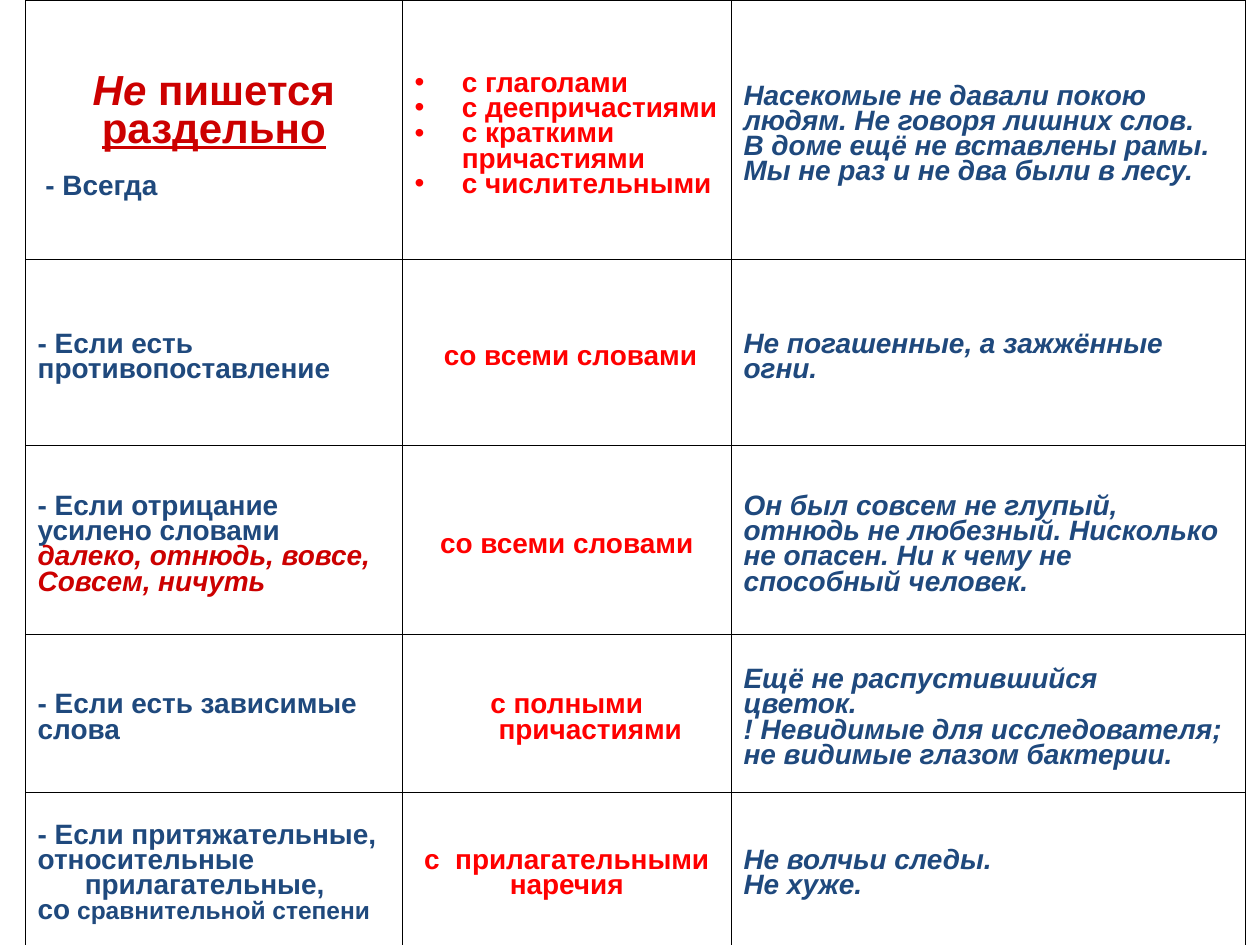
from dataclasses import dataclass

from lxml.etree import SubElement
from pptx import Presentation
from pptx.dml.color import RGBColor
from pptx.enum.text import MSO_ANCHOR, PP_ALIGN
from pptx.oxml import parse_xml
from pptx.oxml.ns import nsdecls, qn
from pptx.util import Cm, Pt

BLUE = RGBColor(0x1F, 0x49, 0x7D)
RED = RGBColor(0xFF, 0x00, 0x00)
DARK_RED = RGBColor(0xCC, 0x00, 0x00)
BLACK = RGBColor(0x00, 0x00, 0x00)

COLUMN_WIDTHS = [Cm(7.6), Cm(6.63), Cm(10.37)]
ROW_HEIGHTS = [Cm(5.23), Cm(3.75), Cm(3.81), Cm(3.18), Cm(3.08)]
HANGING = Cm(0.95)
BORDER_WIDTH = Pt(0.11)
LINE_SPACING = 0.81
EMPTY_LINE = Pt(14.4)


@dataclass
class Span:
    text: str
    color: RGBColor = BLUE
    size: float = 16
    italic: bool = False
    underline: bool = False


@dataclass
class Para:
    spans: list[Span]
    align: PP_ALIGN = PP_ALIGN.LEFT
    bullet: bool = False
    before: int = 0
    after: int = 0


def rule(*lines: str) -> list[Para]:
    return [Para([Span(line)]) for line in lines]


def words(*lines: str) -> list[Para]:
    return [Para([Span(line, RED)], PP_ALIGN.CENTER) for line in lines]


def bullets(*lines: str) -> list[Para]:
    return [Para([Span(line, RED)], bullet=True) for line in lines]


def examples(*lines: str, color: RGBColor = BLUE) -> list[Para]:
    return [Para([Span(line, color, italic=True)]) for line in lines]


# Table content: rule, parts of speech, examples
HEADING = [
    Para([Span("Не", DARK_RED, 24, italic=True), Span(" пишется", DARK_RED, 24)],
         PP_ALIGN.CENTER),
    Para([Span("раздельно", DARK_RED, 24, underline=True)], PP_ALIGN.CENTER),
    Para([Span(" - Всегда")], before=EMPTY_LINE),
]
ROWS = [
    [HEADING,
     bullets("с глаголами", "с деепричастиями", "с краткими причастиями",
             "с числительными"),
     examples("Насекомые не давали покою", "людям. Не говоря лишних слов.",
              "В доме ещё не вставлены рамы.", "Мы не раз и не два были в лесу.")],
    [rule("- Если есть") + [Para([Span("противопоставление")], after=EMPTY_LINE)],
     words(" со всеми словами"),
     examples("Не погашенные, а зажжённые", "огни.")],
    [rule("- Если отрицание", "усилено словами")
     + examples("далеко, отнюдь, вовсе,", "Совсем, ничуть", color=DARK_RED),
     words("со всеми словами"),
     examples("Он был совсем не глупый,", "отнюдь не любезный. Нисколько",
              "не опасен. Ни к чему не", "способный человек.")],
    [rule("- Если есть зависимые", "слова"),
     words("с полными причастиями"),
     examples("Ещё не распустившийся", "цветок.",
              "! Невидимые для исследователя;", "не видимые глазом бактерии.")],
    [rule("- Если притяжательные,", "относительные прилагательные,")
     + [Para([Span("со"), Span(" сравнительной степени", size=14)])],
     words("с  прилагательными", "наречия"),
     examples("Не волчьи следы.", "Не хуже.")],
]


def set_all(target, values: dict) -> None:
    for name, value in values.items():
        setattr(target, name, value)


def add_bullet(properties, color: RGBColor) -> None:
    tint = SubElement(properties, qn("a:buClr"))
    SubElement(tint, qn("a:srgbClr")).set("val", str(color))
    SubElement(properties, qn("a:buFont")).set("typeface", "Arial")
    SubElement(properties, qn("a:buChar")).set("char", "•")


def write_para(paragraph, para: Para) -> None:
    set_all(paragraph, {"alignment": para.align, "line_spacing": LINE_SPACING,
                        "space_before": para.before, "space_after": para.after})
    properties = paragraph._p.get_or_add_pPr()
    properties.set("marL", str(HANGING))
    properties.set("indent", str(-HANGING))
    if para.bullet:
        add_bullet(properties, para.spans[0].color)
    for span in para.spans:
        run = paragraph.add_run()
        run.text = span.text
        set_all(run.font, {"name": "Arial", "size": Pt(span.size), "bold": True,
                           "italic": span.italic, "underline": span.underline})
        run.font.color.rgb = span.color


def draw_borders(cell) -> None:
    properties = cell._tc.get_or_add_tcPr()
    for position, side in enumerate(("lnL", "lnR", "lnT", "lnB")):
        properties.insert(position, parse_xml(
            f'<a:{side} {nsdecls("a")} w="{BORDER_WIDTH}"><a:solidFill>'
            f'<a:srgbClr val="{BLACK}"/></a:solidFill></a:{side}>'))


def fill_cell(cell, paras: list[Para], top: int) -> None:
    set_all(cell, {"vertical_anchor": MSO_ANCHOR.MIDDLE, "margin_top": top,
                   "margin_left": Cm(0.25), "margin_right": Cm(0.25),
                   "margin_bottom": Cm(0.13)})
    cell.fill.background()
    draw_borders(cell)
    frame = cell.text_frame
    for index, para in enumerate(paras):
        write_para(frame.add_paragraph() if index else frame.paragraphs[0], para)


def main() -> None:
    deck = Presentation()
    set_all(deck, {"slide_width": Cm(25.4), "slide_height": Cm(19.05)})
    page = deck.slides.add_slide(deck.slide_layouts[6])

    # Table grid
    table = page.shapes.add_table(len(ROWS), len(COLUMN_WIDTHS), Cm(0.51), Cm(0),
                                  sum(COLUMN_WIDTHS), sum(ROW_HEIGHTS)).table
    set_all(table, {"first_row": False, "horz_banding": False})
    for column, width in zip(table.columns, COLUMN_WIDTHS):
        column.width = width
    for row, height in zip(table.rows, ROW_HEIGHTS):
        row.height = height

    # Cell text
    for row, contents in zip(table.rows, ROWS):
        for cell, paras in zip(row.cells, contents):
            fill_cell(cell, paras, Cm(0.46) if paras is HEADING else Cm(0.36))

    deck.save("out.pptx")


if __name__ == "__main__":
    main()
